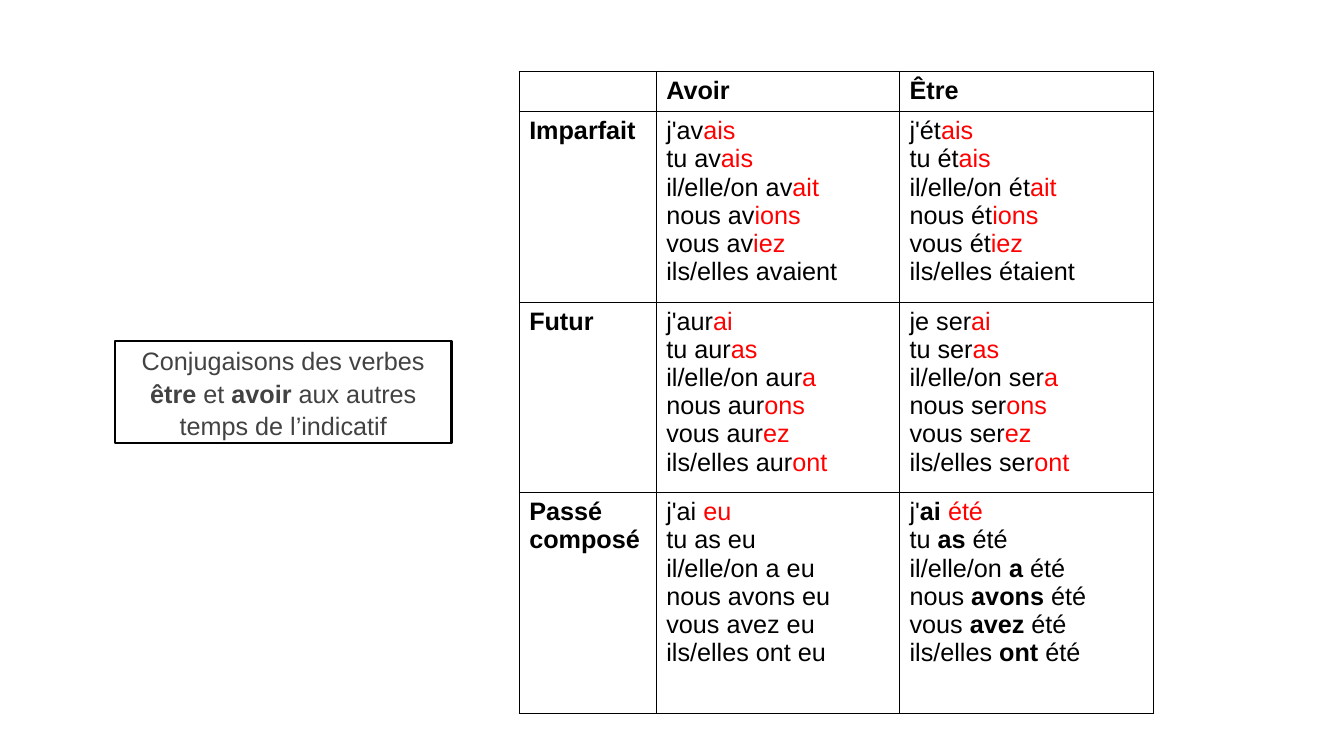
from lxml.etree import SubElement
from pptx import Presentation
from pptx.dml.color import RGBColor as RGB
from pptx.enum.text import MSO_ANCHOR as Anchor, MSO_AUTO_SIZE as Auto, PP_ALIGN as Align
from pptx.oxml.ns import qn
from pptx.util import Inches, Pt

# Markup: *bold*, |red|
TITLE = "Conjugaisons des verbes *être* et *avoir* aux autres temps de l’indicatif"
TENSES = [
    ["", "*Avoir*", "*Être*"],
    ["*Imparfait*",
     "j'av|ais|\ntu av|ais|\nil/elle/on av|ait|\nnous av|ions|\nvous av|iez|\nils/elles avaient",
     "j'ét|ais|\ntu ét|ais|\nil/elle/on ét|ait|\nnous ét|ions|\nvous ét|iez|\nils/elles étaient"],
    ["*Futur*",
     "j'aur|ai|\ntu aur|as|\nil/elle/on aur|a|\nnous aur|ons|\nvous aur|ez|\nils/elles aur|ont|",
     "je ser|ai|\ntu ser|as|\nil/elle/on ser|a|\nnous ser|ons|\nvous ser|ez|\nils/elles ser|ont|"],
    ["*Passé composé*",
     "j'ai |eu|\ntu as eu\nil/elle/on a eu\nnous avons eu\nvous avez eu\nils/elles ont eu",
     "j'*ai *|été|\ntu *as* été\nil/elle/on *a* été\nnous *avons* été\n"
     "vous *avez* été\nils/elles *ont* été"],
]
COLORS = {"ink": "000000", "ending": "FF0000", "title": "424242", "paper": "FFFFFF"}
FONT, SIZE = "Arial", 18

# Percent of the slide's width and height
BOX = (8.55, 45.1, 25.05, 13.45)
TABLE = (38.63, 9.45)
COLS = (10.2, 18.1, 18.9)
ROWS = (5.33, 25.2, 25.2, 29.2)

WIDE, HIGH = Inches(13.33), Inches(7.5)


def across(share):
    return round(WIDE * share / 100)


def down(share):
    return round(HIGH * share / 100)


def color(name):
    return RGB.from_string(COLORS[name])


def write(frame, text, ink="ink", align=Align.LEFT, pitch=1.0):
    """Fill a frame, one paragraph a line, turning the markup into runs."""
    for i, line in enumerate(text.split("\n")):
        par = frame.add_paragraph() if i else frame.paragraphs[0]
        par.alignment, par.line_spacing = align, pitch
        par.font.name, par.font.size = FONT, Pt(SIZE)
        for b, chunk in enumerate(line.split("*")):
            for r, piece in enumerate(chunk.split("|")):
                if piece:
                    run = par.add_run()
                    run.text = piece
                    font = run.font
                    font.name, font.size, font.bold = FONT, Pt(SIZE), b % 2 == 1
                    font.color.rgb = color("ending" if r % 2 else ink)


def border(cell):
    props = cell._tc.get_or_add_tcPr()
    for i, side in enumerate(("lnL", "lnR", "lnT", "lnB")):
        edge = props.makeelement(qn("a:" + side), {"w": str(Pt(1))})
        fill = SubElement(edge, qn("a:solidFill"))
        SubElement(fill, qn("a:srgbClr"), val=COLORS["ink"])
        props.insert(i, edge)


def add_title(slide):
    box = slide.shapes.title
    x, y, w, h = BOX
    box.left, box.top, box.width, box.height = across(x), down(y), across(w), down(h)
    box.fill.solid()
    box.fill.fore_color.rgb = color("paper")
    box.line.color.rgb = color("ink")
    box.line.width = Pt(1.5)
    frame = box.text_frame
    frame.word_wrap, frame.auto_size = True, Auto.NONE
    frame.vertical_anchor = Anchor.MIDDLE
    write(frame, TITLE, ink="title", align=Align.CENTER, pitch=1.08)


def add_tenses(slide):
    x, y = TABLE
    table = slide.shapes.add_table(len(ROWS), len(COLS), across(x), down(y),
                                   across(sum(COLS)), down(sum(ROWS))).table
    table.first_row = table.horz_banding = False
    for col, share in zip(table.columns, COLS):
        col.width = across(share)
    for row, share, texts in zip(table.rows, ROWS, TENSES):
        row.height = down(share)
        for cell, text in zip(row.cells, texts):
            cell.fill.solid()
            cell.fill.fore_color.rgb = color("paper")
            border(cell)
            write(cell.text_frame, text)


def main():
    deck = Presentation()
    deck.slide_width, deck.slide_height = WIDE, HIGH
    slide = deck.slides.add_slide(deck.slide_layouts[5])
    add_title(slide)
    add_tenses(slide)
    deck.save("out.pptx")


if __name__ == "__main__":
    main()
